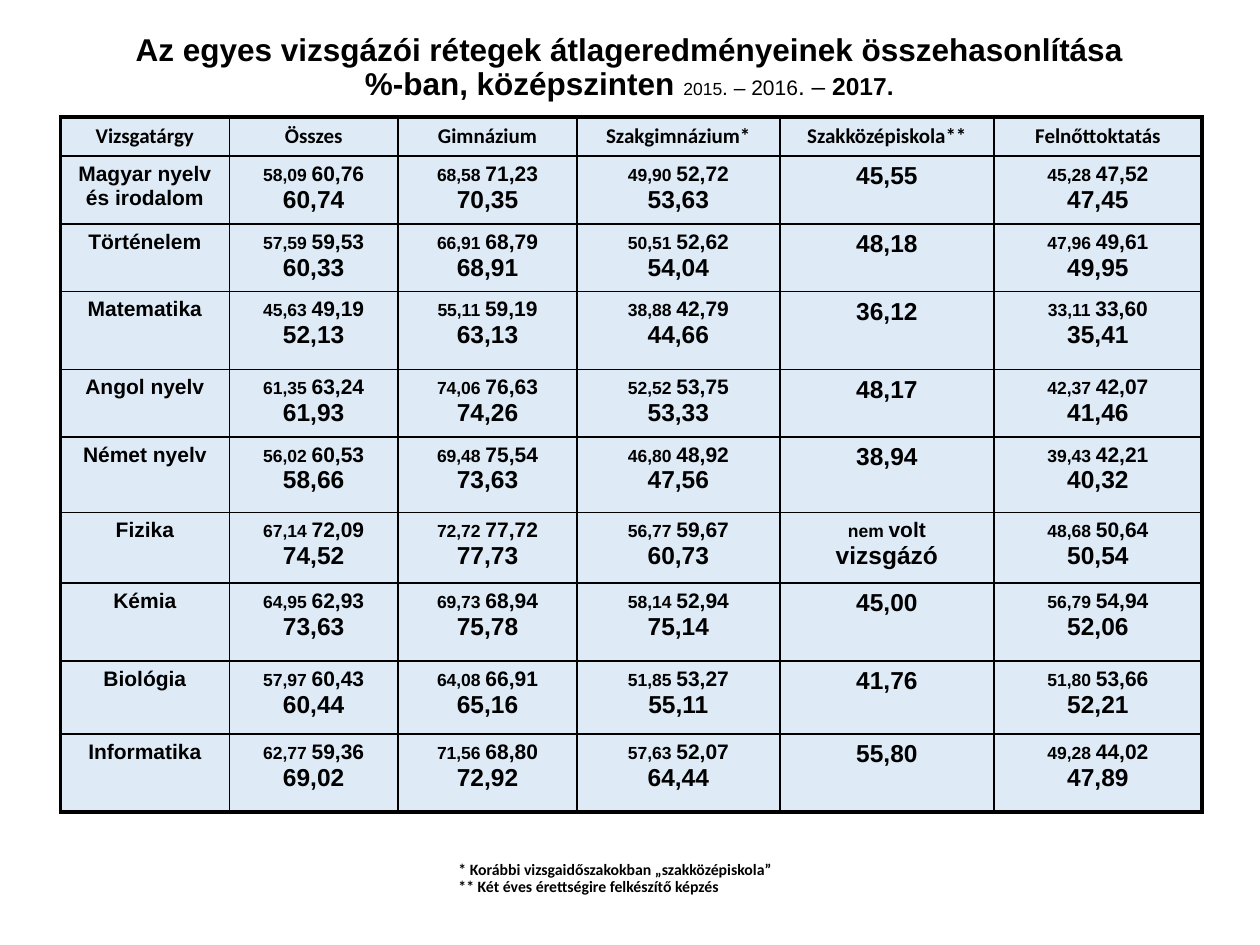
from dataclasses import dataclass

import pptx
import pptx.dml.color
import pptx.enum.text
import pptx.oxml
import pptx.oxml.ns
import pptx.util
from pptx.util import Inches

BLACK = pptx.dml.color.RGBColor(0x00, 0x00, 0x00)
PALE_BLUE = pptx.dml.color.RGBColor(0xDE, 0xEB, 0xF7)
CENTER = pptx.enum.text.PP_ALIGN.CENTER
LEFT = pptx.enum.text.PP_ALIGN.LEFT
THIN, THICK = 1, 2.25
GAP = " "  # em space between the two earlier years

COLUMN_WIDTHS = (1.34, 1.34, 1.42, 1.61, 1.7, 1.65)
HEADINGS = ("Vizsgatárgy", "Összes", "Gimnázium", "Szakgimnázium*",
            "Szakközépiskola**", "Felnőttoktatás")
HEADING_HEIGHT = 0.31


@dataclass
class Span:
    text: str
    size: float
    bold: bool = True


@dataclass
class Subject:
    """Each result lists 2015, 2016 and 2017, or the 2017 entry alone."""
    name: str
    height: float
    results: tuple[str, ...]


SUBJECTS = (
    Subject("Magyar nyelv és irodalom", 0.54, (
        "58,09 60,76 60,74", "68,58 71,23 70,35", "49,90 52,72 53,63",
        "45,55", "45,28 47,52 47,45")),
    Subject("Történelem", 0.53, (
        "57,59 59,53 60,33", "66,91 68,79 68,91", "50,51 52,62 54,04",
        "48,18", "47,96 49,61 49,95")),
    Subject("Matematika", 0.62, (
        "45,63 49,19 52,13", "55,11 59,19 63,13", "38,88 42,79 44,66",
        "36,12", "33,11 33,60 35,41")),
    Subject("Angol nyelv", 0.53, (
        "61,35 63,24 61,93", "74,06 76,63 74,26", "52,52 53,75 53,33",
        "48,17", "42,37 42,07 41,46")),
    Subject("Német nyelv", 0.6, (
        "56,02 60,53 58,66", "69,48 75,54 73,63", "46,80 48,92 47,56",
        "38,94", "39,43 42,21 40,32")),
    Subject("Fizika", 0.56, (
        "67,14 72,09 74,52", "72,72 77,72 77,73", "56,77 59,67 60,73",
        "nem volt vizsgázó", "48,68 50,64 50,54")),
    Subject("Kémia", 0.62, (
        "64,95 62,93 73,63", "69,73 68,94 75,78", "58,14 52,94 75,14",
        "45,00", "56,79 54,94 52,06")),
    Subject("Biológia", 0.58, (
        "57,97 60,43 60,44", "64,08 66,91 65,16", "51,85 53,27 55,11",
        "41,76", "51,80 53,66 52,21")),
    Subject("Informatika", 0.62, (
        "62,77 59,36 69,02", "71,56 68,80 72,92", "57,63 52,07 64,44",
        "55,80", "49,28 44,02 47,89")),
)

TITLE_LINES = (
    (Span("Az egyes vizsgázói rétegek átlageredményeinek összehasonlítása", 18),),
    (Span("%-ban, középszinten ", 18), Span("2015", 10, False),
     Span(". – 2016", 12, False), Span(". – ", 14, False), Span("2017.", 14)),
)
FOOTNOTE_LINES = (
    (Span("* Korábbi vizsgaidőszakokban „szakközépiskola”", 9),),
    (Span("** Két éves érettségire felkészítő képzés", 9),),
)


def write_spans(para, spans: tuple[Span, ...], font_name: str) -> None:
    para.font.name = font_name
    para.font.bold = True
    para.font.color.rgb = BLACK
    for span in spans:
        run = para.add_run()
        run.text = span.text
        run.font.size = pptx.util.Pt(span.size)
        if not span.bold:
            run.font.bold = False


def add_text(page, lines, left: float, top: float, width: float, height: float,
             font_name: str, alignment) -> None:
    """Add a text box whose lines are parted by line breaks."""
    box = page.shapes.add_textbox(
        Inches(left), Inches(top), Inches(width), Inches(height))
    frame = box.text_frame
    frame.word_wrap = True
    frame.vertical_anchor = pptx.enum.text.MSO_ANCHOR.MIDDLE
    para = frame.paragraphs[0]
    para.alignment = alignment
    para.line_spacing = 0.9
    for index, spans in enumerate(lines):
        if index:
            para.add_line_break()
        write_spans(para, spans, font_name)


def set_borders(cell, widths: dict[str, float]) -> None:
    properties = cell._tc.get_or_add_tcPr()
    for side, width in widths.items():
        properties.append(pptx.oxml.parse_xml(
            f'<a:ln{side} {pptx.oxml.ns.nsdecls("a")} w="{pptx.util.Pt(width)}">'
            f'<a:solidFill><a:srgbClr val="{BLACK}"/></a:solidFill></a:ln{side}>'))


def fill_cell(cell, lines, font_name: str = "Arial") -> None:
    cell.fill.solid()
    cell.fill.fore_color.rgb = PALE_BLUE
    frame = cell.text_frame
    for index, spans in enumerate(lines):
        para = frame.add_paragraph() if index else frame.paragraphs[0]
        para.alignment = CENTER
        write_spans(para, spans, font_name)


def result_lines(result: str) -> list[tuple[Span, ...]]:
    years = result.split()
    if len(years) < 3:
        return [(Span(result, 14),)]
    oldest, previous, latest = years
    return [(Span(oldest + GAP, 10), Span(previous, 12)), (Span(latest, 14),)]


def add_results_table(page) -> None:
    heights = [HEADING_HEIGHT] + [subject.height for subject in SUBJECTS]
    table = page.shapes.add_table(
        len(heights), len(HEADINGS), Inches(0.48), Inches(0.93),
        Inches(sum(COLUMN_WIDTHS)), Inches(sum(heights))).table
    table.first_row = table.horz_banding = False
    for column, width in zip(table.columns, COLUMN_WIDTHS):
        column.width = Inches(width)
    for row, height in zip(table.rows, heights):
        row.height = Inches(height)

    last_row, last_column = len(heights) - 1, len(HEADINGS) - 1
    for r in range(len(heights)):
        for c in range(len(HEADINGS)):
            set_borders(table.cell(r, c), {
                "L": THICK if c == 0 else THIN,
                "R": THICK if c == last_column else THIN,
                "T": THICK if r == 0 else THIN,
                "B": THICK if r == last_row else THIN,
            })

    for c, heading in enumerate(HEADINGS):
        fill_cell(table.cell(0, c), [(Span(heading, 12),)], "Calibri")
    for r, subject in enumerate(SUBJECTS, start=1):
        fill_cell(table.cell(r, 0), [(Span(subject.name, 12),)])
        for c, result in enumerate(subject.results, start=1):
            fill_cell(table.cell(r, c), result_lines(result))


def main() -> None:
    deck = pptx.Presentation()
    deck.slide_width, deck.slide_height = Inches(10), Inches(7.5)
    page = deck.slides.add_slide(deck.slide_layouts[6])
    add_text(page, FOOTNOTE_LINES, 3.54, 6.82, 3.1, 0.31, "Calibri", LEFT)
    add_results_table(page)
    add_text(page, TITLE_LINES, 0.43, 0, 9.13, 1.09, "Arial", CENTER)
    deck.save("out.pptx")


if __name__ == "__main__":
    main()
